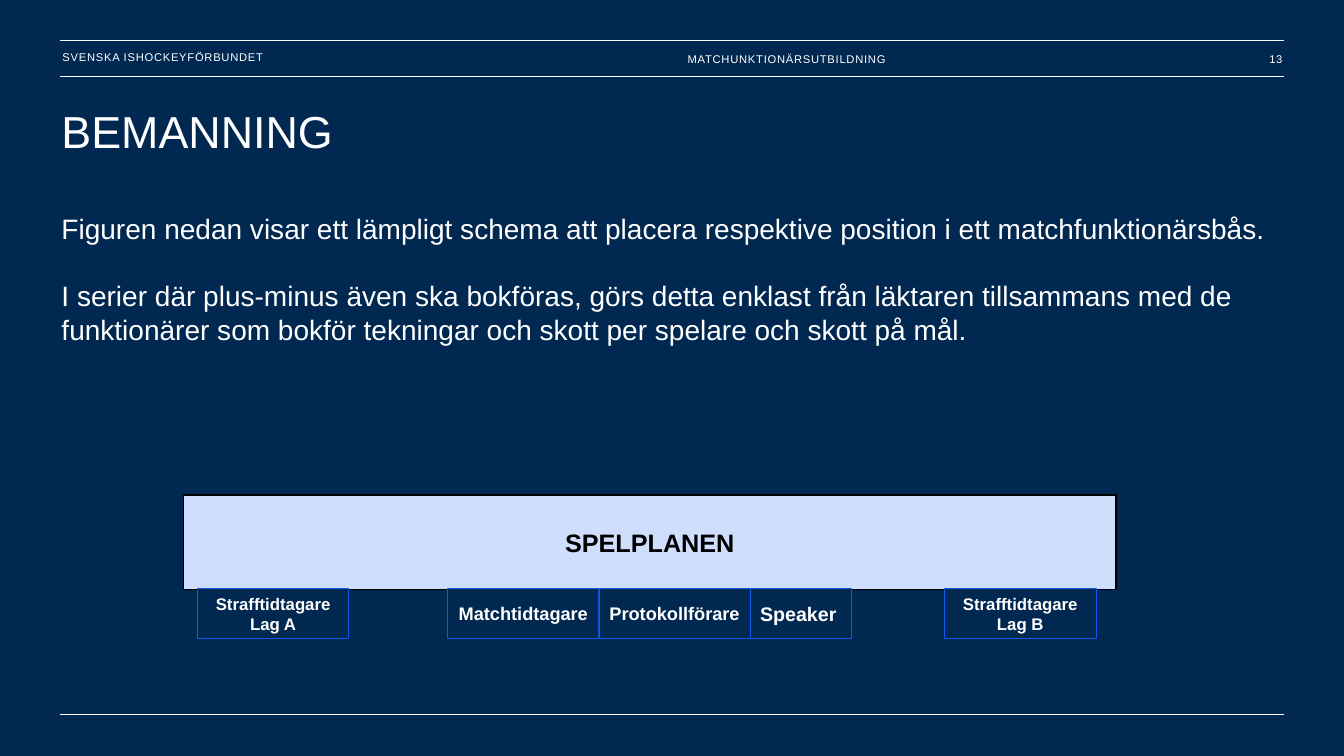
from dataclasses import dataclass

from lxml import etree
from pptx import Presentation
from pptx.dml.color import RGBColor
from pptx.enum import shapes, text
from pptx.oxml.ns import qn
from pptx.util import Inches, Pt

TITLE = "BEMANNING"
BODY = [
    "Figuren nedan visar ett lämpligt schema att placera respektive position "
    "i ett matchfunktionärsbås.",
    "I serier där plus-minus även ska bokföras, görs detta enklast från läktaren "
    "tillsammans med de funktionärer som bokför tekningar och skott per spelare "
    "och skott på mål.",
]
LEFT, CENTER, RIGHT = text.PP_ALIGN.LEFT, text.PP_ALIGN.CENTER, text.PP_ALIGN.RIGHT
# text, left, width, top inset, alignment
HEADER = [
    ("SVENSKA ISHOCKEYFÖRBUNDET", 0.62, 3.36, 0, LEFT),
    ("MATCHUNKTIONÄRSUTBILDNING", 6.82, 3.82, 0.04, LEFT),
    ("13", 11.83, 0.89, 0.04, RIGHT),
]
RULES = [(0.4, 1), (0.76, 1), (7.09, 1)]  # height on the slide, weight
RINK = "SPELPLANEN"
# left edge of each group, then its seats: text, width, size, alignment
SEAT_GROUPS = [
    (1.96, [("Strafftidtagare Lag A", 1.5, 12, CENTER)]),
    (4.44, [("Matchtidtagare", 1.5, 13, CENTER),
            ("Protokollförare", 1.5, 13, CENTER),
            ("Speaker", 1, 14, LEFT)]),
    (9.37, [("Strafftidtagare Lag B", 1.5, 12, CENTER)]),
]


@dataclass(frozen=True)
class Theme:
    font: str = "Arial"
    navy: str = "002850"
    white: str = "FFFFFF"
    black: str = "000000"
    ice: str = "CEDEFC"
    blue: str = "0F59EB"
    header: int = 8
    title: int = 32
    body: int = 20
    leading: int = 24
    rink: int = 18


T = Theme()


def rgb(value):
    return RGBColor.from_string(value)


def add_run(p, words, size, color=T.white, bold=False):
    r = p.add_run()
    r.text = words
    r.font.name, r.font.size, r.font.bold = T.font, Pt(size), bold
    r.font.color.rgb = rgb(color)
    return r


def set_frame(tf, anchor, top=0):
    tf.word_wrap = True
    tf.auto_size = text.MSO_AUTO_SIZE.NONE
    tf.vertical_anchor = anchor
    tf.margin_left = tf.margin_right = tf.margin_bottom = 0
    tf.margin_top = Inches(top)


def place(sp, left, top, width, height):
    sp.left, sp.top = Inches(left), Inches(top)
    sp.width, sp.height = Inches(width), Inches(height)


def add_rule(s, y, weight):
    line = s.shapes.add_connector(shapes.MSO_CONNECTOR.STRAIGHT, Inches(0.6),
                                  Inches(y), Inches(12.73), Inches(y))
    line.line.color.rgb = rgb(T.white)
    line.line.width = Pt(weight)
    etree.SubElement(line._element.spPr, qn("a:effectLst"))


def add_header(s, words, left, width, inset, align):
    tf = s.shapes.add_textbox(Inches(left), Inches(0.4), Inches(width),
                              Inches(0.34)).text_frame
    set_frame(tf, text.MSO_ANCHOR.MIDDLE, inset)
    p = tf.paragraphs[0]
    p.alignment = align
    r = add_run(p, words, T.header)
    r.font._element.set("spc", "50")


def add_box(s, words, box, fill, line, weight, size, color, align):
    sp = s.shapes.add_shape(shapes.MSO_SHAPE.RECTANGLE, *map(Inches, box))
    sp.shadow.inherit = False
    sp.fill.solid()
    sp.fill.fore_color.rgb = rgb(fill)
    sp.line.color.rgb = rgb(line)
    sp.line.width = Pt(weight)
    tf = sp.text_frame
    tf.word_wrap = True
    tf.vertical_anchor = text.MSO_ANCHOR.MIDDLE
    p = tf.paragraphs[0]
    p.alignment = align
    add_run(p, words, size, color, True)


def fill_placeholders(s):
    title, body = s.placeholders
    place(title, 0.61, 1.03, 12.12, 0.7)
    set_frame(title.text_frame, text.MSO_ANCHOR.TOP)
    p = title.text_frame.paragraphs[0]
    p.alignment = LEFT
    add_run(p, TITLE, T.title)

    place(body, 0.61, 2.1, 12.12, 2)
    tf = body.text_frame
    set_frame(tf, text.MSO_ANCHOR.TOP)
    for i, words in enumerate(BODY):
        p = tf.add_paragraph() if i else tf.paragraphs[0]
        pPr = p._p.get_or_add_pPr()
        pPr.set("marL", "0")
        pPr.set("indent", "0")
        etree.SubElement(pPr, qn("a:buNone"))
        p.line_spacing = Pt(T.leading)
        p.space_before = Pt(T.leading if i else 0)
        add_run(p, words, T.body)


def main():
    prs = Presentation()
    prs.slide_width, prs.slide_height = Inches(13.33), Inches(7.5)
    s = prs.slides.add_slide(prs.slide_layouts[1])
    s.background.fill.solid()
    s.background.fill.fore_color.rgb = rgb(T.navy)

    for rule in RULES:
        add_rule(s, *rule)
    for item in HEADER:
        add_header(s, *item)
    fill_placeholders(s)
    add_box(s, RINK, (1.82, 4.91, 9.25, 0.94), T.ice, T.black, 1,
            T.rink, T.black, CENTER)
    for left, seats in SEAT_GROUPS:
        for words, width, size, align in seats:
            add_box(s, words, (left, 5.84, width, 0.49), T.navy, T.blue, 0.5,
                    size, T.white, align)
            left += width
    prs.save("out.pptx")


if __name__ == "__main__":
    main()
